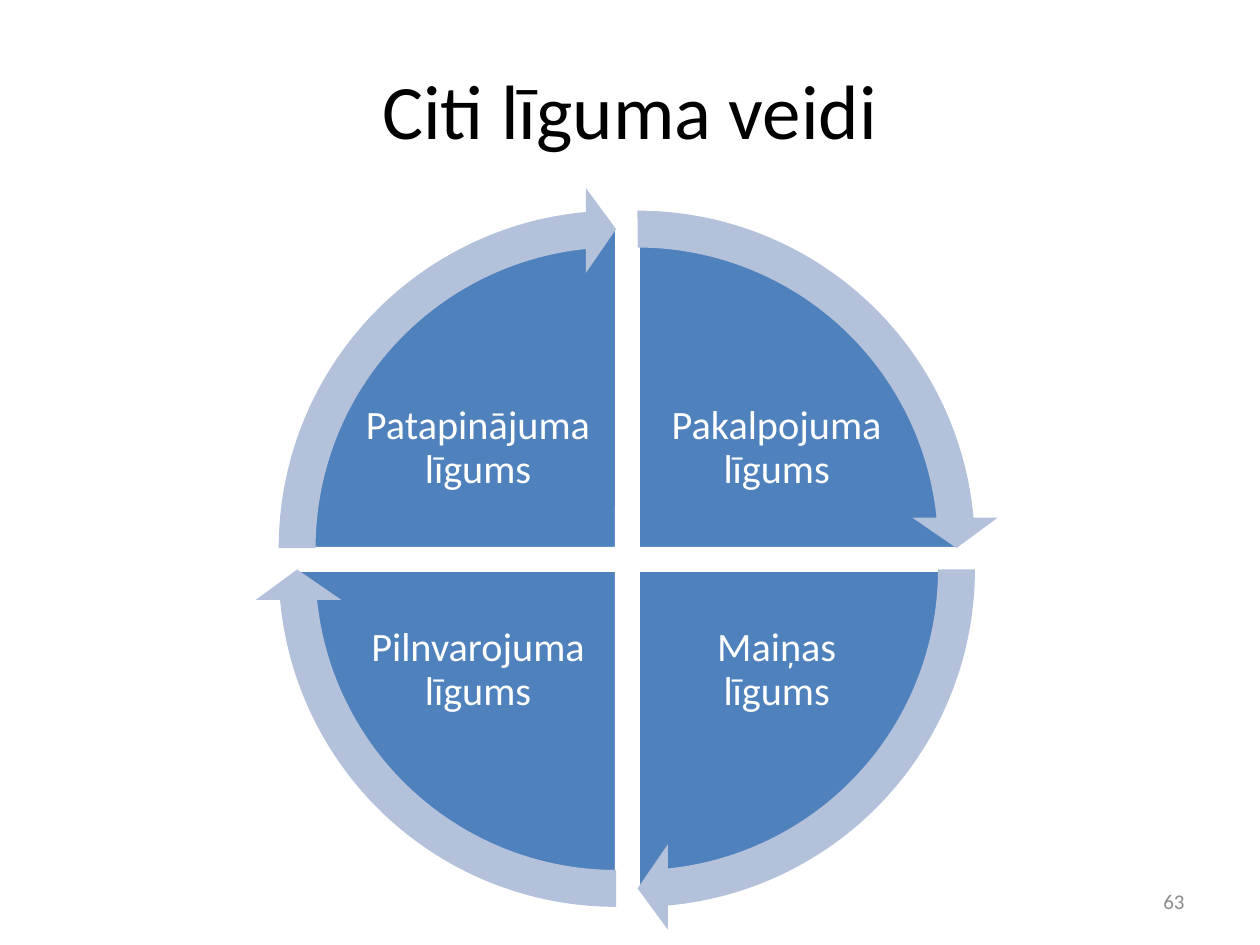
import pptx
import pptx.dml.color
import pptx.enum.shapes
import pptx.enum.text
import pptx.util

PX = 9144
COLORS = {"sector": "4F81BD", "arrow": "B3C1DB", "white": "FFFFFF", "title": "000000", "number": "8C8C8C"}
SHAPES = pptx.enum.shapes.MSO_SHAPE
ALIGN = pptx.enum.text.PP_ALIGN
QUARTER_TURN = 54


def rgb(name):
    """Return the named colour."""
    return pptx.dml.color.RGBColor.from_string(COLORS[name])


def set_attributes(target, values):
    """Set each attribute in a dict of format values."""
    for name, value in values.items():
        setattr(target, name, value)


def add_text(slide, box, text, size, color, alignment=ALIGN.CENTER, frame_format=None, line_spacing=1.0):
    """Place a vertically centred text box."""
    frame = slide.shapes.add_textbox(*(length * PX for length in box)).text_frame
    set_attributes(frame, {
        "word_wrap": True,
        "vertical_anchor": pptx.enum.text.MSO_ANCHOR.MIDDLE,
        **(frame_format or {}),
    })
    paragraph = frame.paragraphs[0]
    set_attributes(paragraph, {"text": text, "alignment": alignment, "line_spacing": line_spacing})
    set_attributes(paragraph.runs[0].font, {"name": "Calibri", "size": pptx.util.Pt(size)})
    paragraph.runs[0].font.color.rgb = rgb(color)


def add_round_shape(slide, kind, left, top, diameter, color, adjustments):
    """Place a filled shape with a square frame and the given adjustments."""
    shape = slide.shapes.add_shape(kind, left * PX, top * PX, diameter * PX, diameter * PX)
    shape.shadow.inherit = False
    shape.fill.solid()
    shape.fill.fore_color.rgb = rgb(color)
    shape.line.fill.background()
    for index, value in enumerate(adjustments):
        shape.adjustments[index] = value
    return shape


def add_cycle(slide, box, labels):
    """Draw four labelled sectors, clockwise from top right, and the arrows around them."""
    left, top, width, height = box
    gap, inset = 17, 32
    arrow_diameter = width - gap
    pie_diameter = arrow_diameter - 2 * inset + 1
    label_width, label_height = 189, 140
    label_insets = {f"margin_{side}": 3 * PX for side in ("left", "top", "right", "bottom")}
    quadrants = [(1, 0), (1, 1), (0, 1), (0, 0)]
    starts = [(3 + index) % 4 * QUARTER_TURN for index in range(4)]

    for (column, row), start, label in zip(quadrants, starts, labels):
        sector = add_round_shape(
            slide, SHAPES.PIE, left + inset + column * gap, top + inset + row * gap,
            pie_diameter, "sector", (start, (start + QUARTER_TURN) % 216))
        sector.line.color.rgb = rgb("white")
        sector.line.width = pptx.util.Pt(2)
        label_box = (left + 83 + column * 237, top + 138 + row * 176, label_width, label_height)
        add_text(slide, label_box, label, 23, "white", frame_format=label_insets, line_spacing=0.9)

    for (column, row), start in zip(quadrants, starts):
        add_round_shape(
            slide, SHAPES.CIRCULAR_ARROW, left + column * gap, top + row * gap,
            arrow_diameter, "arrow",
            (0.051, 3.275, start + QUARTER_TURN - 3.275, start, 0.059))


def main():
    """Build and save the slide."""
    presentation = pptx.Presentation()
    set_attributes(presentation, {"slide_width": 1000 * PX, "slide_height": 750 * PX})
    slide = presentation.slides.add_slide(presentation.slide_layouts[6])
    add_text(slide, (50, 24, 900, 125), "Citi līguma veidi", 44, "title")
    add_cycle(slide, (202, 148, 591, 591), [
        "Pakalpojuma līgums", "Maiņas līgums", "Pilnvarojuma līgums", "Patapinājuma līgums"])
    add_text(slide, (717, 695, 233, 40), "63", 12, "number", ALIGN.RIGHT)
    presentation.save("out.pptx")


if __name__ == "__main__":
    main()
